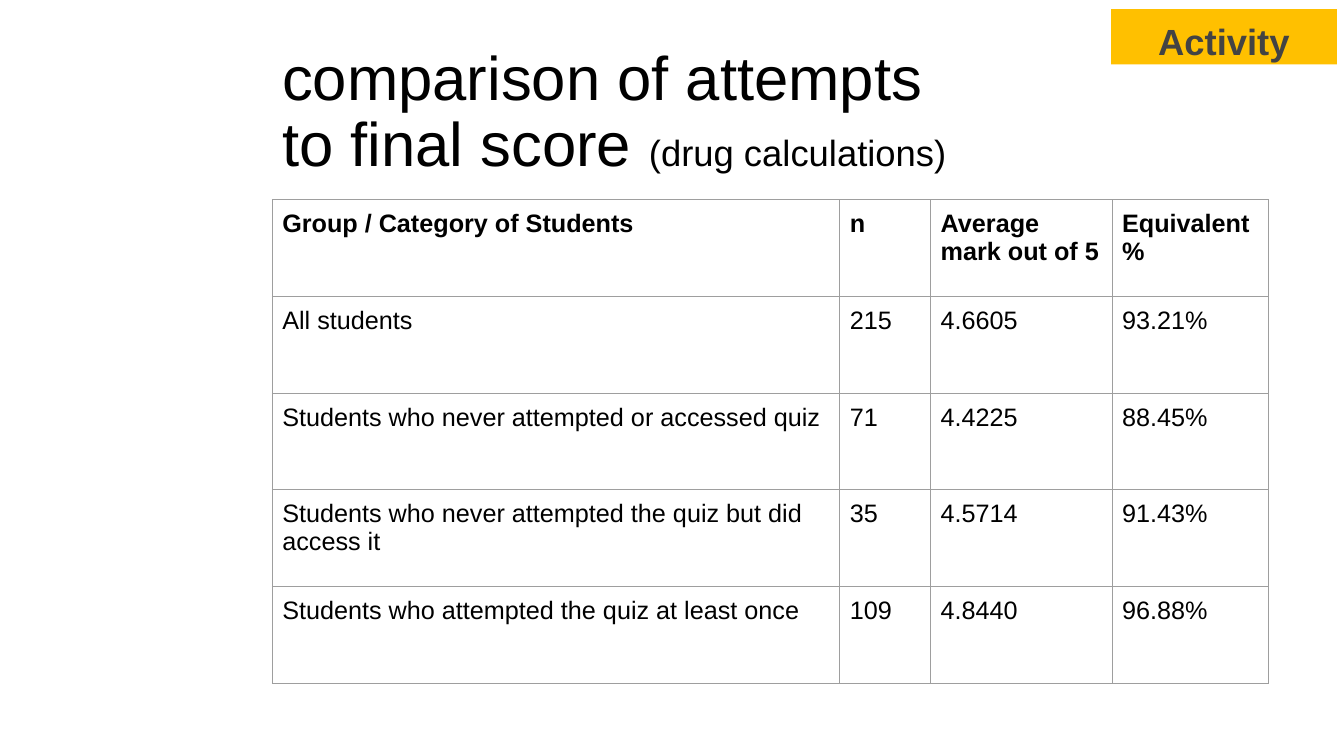
from lxml.etree import SubElement
from pptx import Presentation
from pptx.dml.color import RGBColor
from pptx.enum.shapes import MSO_SHAPE as Shape
from pptx.enum.text import MSO_ANCHOR as Anchor, PP_ALIGN as Align
from pptx.oxml.ns import qn
from pptx.util import Inches, Pt

FONT = "Arial"
BLACK, GREY, AMBER, BORDER = "000000", "434343", "FFC000", "9E9E9E"
INSET = Inches(0.1)
COLUMN_WIDTHS = [5.63, 0.9, 1.8, 1.55]
ROW_HEIGHT = 0.96
RESULTS = [
    ["Group / Category of Students", "n", "Average mark out of 5", "Equivalent %"],
    ["All students", "215", "4.6605", "93.21%"],
    ["Students who never attempted or accessed quiz", "71", "4.4225", "88.45%"],
    ["Students who never attempted the quiz but did access it", "35", "4.5714", "91.43%"],
    ["Students who attempted the quiz at least once", "109", "4.8440", "96.88%"],
]


def color(hex_code):
    return RGBColor.from_string(hex_code)


def style_run(run, size, hex_code=BLACK, bold=False):
    run.font.name = FONT
    run.font.size = Pt(size)
    run.font.bold = bold
    run.font.color.rgb = color(hex_code)


def set_insets(holder):
    """Give a text frame or a table cell the same margin on all sides."""
    holder.margin_left = holder.margin_right = INSET
    holder.margin_top = holder.margin_bottom = INSET


def add_title(slide, heading, topic):
    frame = slide.shapes.add_textbox(
        Inches(2.7), Inches(0.4), Inches(7.1), Inches(1.45)).text_frame
    frame.word_wrap = True
    frame.vertical_anchor = Anchor.MIDDLE
    set_insets(frame)
    paragraph = frame.paragraphs[0]
    paragraph.line_spacing = 0.9
    for text, size in ((heading, 44), (topic, 26)):
        run = paragraph.add_run()
        run.text = text
        style_run(run, size)


def add_borders(cell):
    properties = cell._tc.get_or_add_tcPr()
    for position, side in enumerate(("a:lnL", "a:lnR", "a:lnT", "a:lnB")):
        line = SubElement(properties, qn(side), w=str(Pt(0.75)))
        properties.insert(position, line)
        fill = SubElement(line, qn("a:solidFill"))
        SubElement(fill, qn("a:srgbClr"), val=BORDER)


def add_results_table(slide):
    table = slide.shapes.add_table(
        len(RESULTS), len(COLUMN_WIDTHS), Inches(2.7), Inches(1.98),
        Inches(sum(COLUMN_WIDTHS)), Inches(ROW_HEIGHT * len(RESULTS))).table
    table.horz_banding = False
    for column, width in zip(table.columns, COLUMN_WIDTHS):
        column.width = Inches(width)
    for row_index, values in enumerate(RESULTS):
        table.rows[row_index].height = Inches(ROW_HEIGHT)
        for column_index, value in enumerate(values):
            cell = table.cell(row_index, column_index)
            cell.text_frame.text = value
            style_run(cell.text_frame.paragraphs[0].runs[0], 18, bold=row_index == 0)
            set_insets(cell)
            cell.fill.background()
            add_borders(cell)


def add_tag(slide, label):
    tag = slide.shapes.add_shape(
        Shape.RECTANGLE, Inches(11.02), Inches(0.09), Inches(2.24), Inches(0.55))
    tag.shadow.inherit = False
    tag.fill.solid()
    tag.fill.fore_color.rgb = color(AMBER)
    tag.line.fill.background()
    frame = tag.text_frame
    frame.text = label
    frame.vertical_anchor = Anchor.TOP
    set_insets(frame)
    paragraph = frame.paragraphs[0]
    paragraph.alignment = Align.CENTER
    style_run(paragraph.runs[0], 26, GREY, bold=True)


def main():
    deck = Presentation()
    deck.slide_width, deck.slide_height = Inches(13.33), Inches(7.5)
    slide = deck.slides.add_slide(deck.slide_layouts[6])
    add_title(slide, "comparison of attempts to final score ", "(drug calculations)")
    add_results_table(slide)
    add_tag(slide, "Activity")
    deck.save("out.pptx")


if __name__ == "__main__":
    main()
